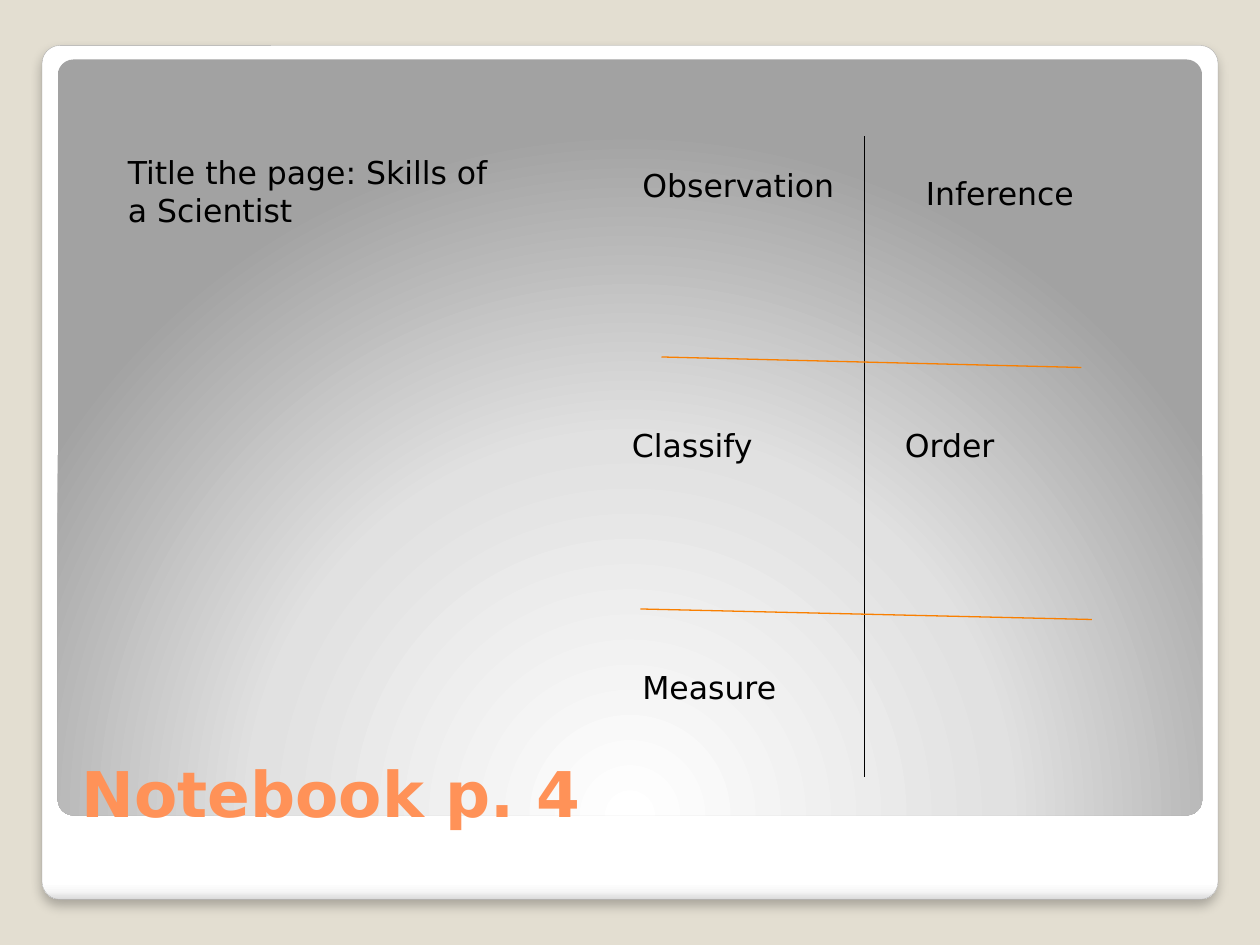
from dataclasses import dataclass

import pptx
import pptx.dml.color
import pptx.enum.shapes
import pptx.enum.text
import pptx.oxml
import pptx.oxml.ns
import pptx.util

Pt = pptx.util.Pt
NS = pptx.oxml.ns.nsdecls("a")


@dataclass(frozen=True)
class Theme:
    font: str = "DejaVu Sans"
    backdrop: str = "E3DED1"
    border: str = "A4A4A4"
    ink: str = "000000"
    title: str = "FF9258"
    rule: str = "F97F00"
    card: tuple = ((0, "FFFFFF"), (98, "FFFFFF"), (99, "F7F7F7"), (100, "DADADA"))
    panel: tuple = ((0, "FFFFFF"), (55, "E1E1E1"), (100, "A2A2A2"))
    title_size: int = 36
    body_size: int = 18
    rule_width: float = 0.75


THEME = Theme()


def rgb(value):
    return pptx.dml.color.RGBColor.from_string(value)


def add_rounded(shapes, box, stops, direction):
    """Add a rounded rectangle whose gradient runs as the direction XML says."""
    sp = shapes.add_shape(pptx.enum.shapes.MSO_SHAPE.ROUNDED_RECTANGLE, *map(Pt, box))
    sp.adjustments[0] = 0.021
    sp.shadow.inherit = False
    sp.line.fill.background()
    marks = "".join(
        f'<a:gs pos="{pos * 1000}"><a:srgbClr val="{color}"/></a:gs>' for pos, color in stops
    )
    grad = f'<a:gradFill {NS} rotWithShape="1"><a:gsLst>{marks}</a:gsLst>{direction}</a:gradFill>'
    geometry = sp._element.spPr.find(pptx.oxml.ns.qn("a:prstGeom"))
    geometry.addnext(pptx.oxml.parse_xml(grad))
    return sp


def add_text(shapes, box, text, size=THEME.body_size, color=THEME.ink, wrap=True):
    sp = shapes.add_textbox(*map(Pt, box))
    tf = sp.text_frame
    tf.word_wrap = wrap
    p = tf.paragraphs[0]
    p.text = text
    p.font.name = THEME.font
    p.font.size = Pt(size)
    p.font.color.rgb = rgb(color)
    return tf


def add_line(shapes, start, end, color):
    line = shapes.add_connector(
        pptx.enum.shapes.MSO_CONNECTOR.STRAIGHT, *map(Pt, (*start, *end))
    )
    line.line.color.rgb = rgb(color)
    line.line.width = Pt(THEME.rule_width)
    line._element.spPr.append(pptx.oxml.parse_xml(f"<a:effectLst {NS}/>"))


def add_frame(s, box):
    """Add the white card with its shadow and the shaded panel inside it."""
    left, top, width, height = box
    card = add_rounded(s.shapes, box, THEME.card, '<a:lin ang="5400000" scaled="0"/>')
    card.line.color.rgb = rgb(THEME.border)
    card.line.width = Pt(0.16)
    shadow = (
        f'<a:outerShdw {NS} blurRad="{Pt(6)}" dist="{Pt(4)}" dir="5400000" algn="tl" '
        f'rotWithShape="0"><a:srgbClr val="{THEME.ink}"><a:alpha val="25000"/>'
        "</a:srgbClr></a:outerShdw>"
    )
    effects = card._element.spPr.find(pptx.oxml.ns.qn("a:effectLst"))
    effects.append(pptx.oxml.parse_xml(shadow))

    panel = (left + 9, top + 8, width - 18, 432)
    radial = (
        '<a:path path="circle">'
        '<a:fillToRect l="50000" t="175000" r="50000" b="-75000"/></a:path>'
    )
    add_rounded(s.shapes, panel, THEME.panel, radial)


def add_title(s, box):
    tf = add_text(s.shapes, box, "Notebook p. 4", THEME.title_size, THEME.title)
    tf.vertical_anchor = pptx.enum.text.MSO_ANCHOR.BOTTOM
    tf.margin_bottom = Pt(1)
    tf.paragraphs[0].font.bold = True


def add_instruction(s, box):
    add_text(s.shapes, box, "Title the page: Skills of a Scientist")


def add_skill_grid(s, box):
    """Add the skills chart: one upright rule, two sloping rules, five labels."""
    left, top, width, height = box
    shapes = s.shapes.add_group_shape().shapes

    middle = left + 140
    add_line(shapes, (middle, top), (middle, top + height), THEME.ink)
    for x1, x2, y in ((12, 270, 270), (24, 264, 126)):
        add_line(shapes, (left + x1, top + y), (left + x2, top + y + 6), THEME.rule)

    labels = (
        ("Observation", 6, 13.5, 126, True),
        ("Inference", 168, 18, 126, True),
        ("Classify", 0, 162, 120, True),
        ("Order", 156, 162, 114, True),
        ("Measure", 6, 300, 91, False),
    )
    for text, x, y, label_width, wrap in labels:
        tf = add_text(shapes, (left + x, top + y, label_width, 29), text, wrap=wrap)
        tf.auto_size = pptx.enum.text.MSO_AUTO_SIZE.SHAPE_TO_FIT_TEXT


def main():
    prs = pptx.Presentation()
    prs.slide_width, prs.slide_height = Pt(720), Pt(540)
    s = prs.slides.add_slide(prs.slide_layouts[6])
    s.background.fill.solid()
    s.background.fill.fore_color.rgb = rgb(THEME.backdrop)

    add_frame(s, (24, 26, 672, 488))
    add_title(s, (39.6, 392.4, 644.4, 82.8))
    add_skill_grid(s, (354, 78, 294, 366))
    add_instruction(s, (66, 84, 234, 94))
    prs.save("out.pptx")


if __name__ == "__main__":
    main()
